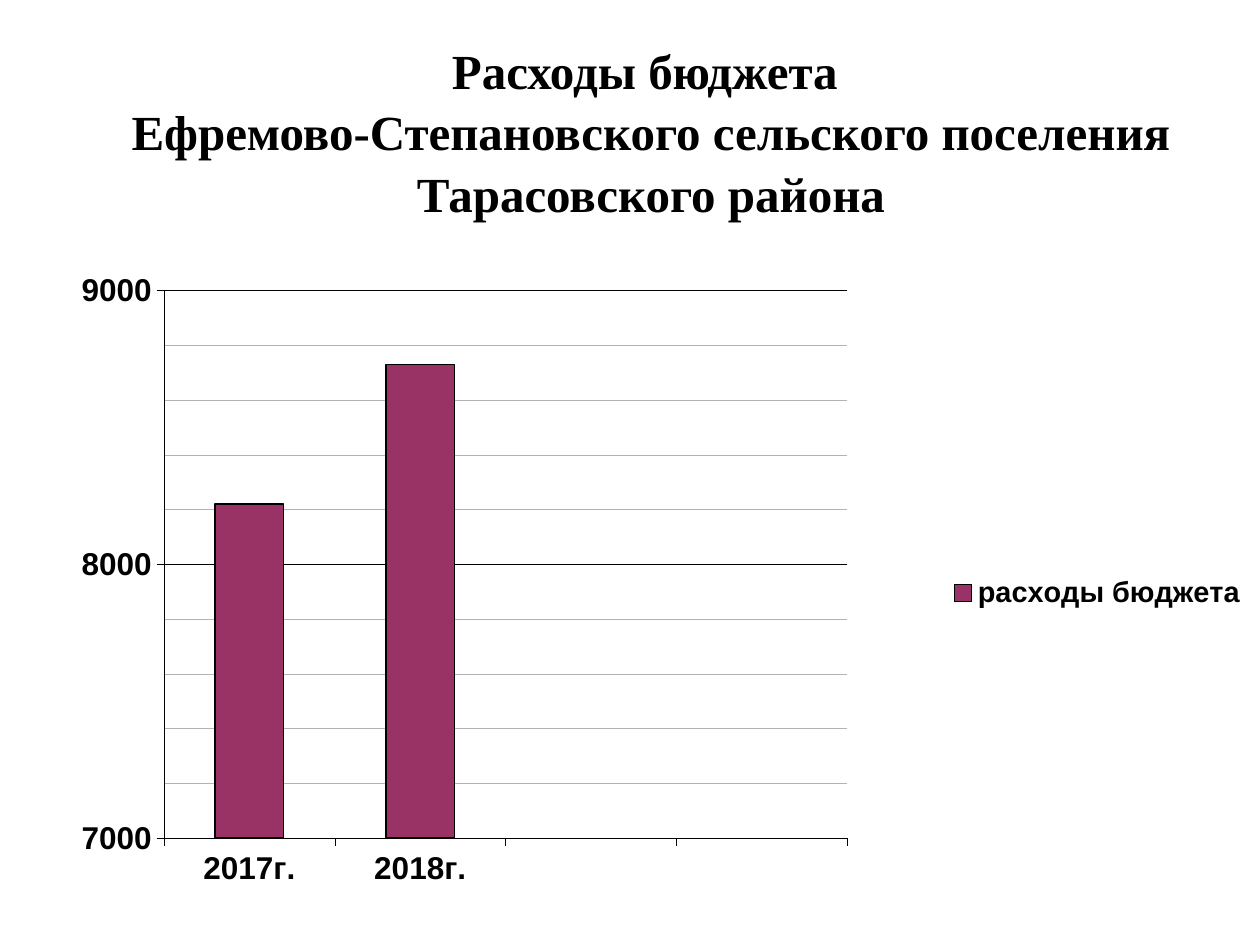
from copy import deepcopy

from lxml import etree
from pptx import Presentation
from pptx import util as u
from pptx.chart.data import CategoryChartData
from pptx.dml.color import RGBColor
from pptx.enum import chart as charts, text

PX = 914400 // 126
COLORS = {"ink": "000000", "paper": "FFFFFF", "bar": "993366", "minor": "B3B3B3"}
LAYOUT = {"x": 0.089, "y": 0.039, "w": 0.568, "h": 0.835}
TITLE = [
    "Расходы бюджета ",
    "Ефремово-Степановского сельского поселения",
    "Тарасовского района",
]


def style_font(font, size, name="Arial"):
    font.size = u.Pt(size)
    font.name = name
    font.bold = True
    font.color.rgb = RGBColor.from_string(COLORS["ink"])


def style_line(line, color="ink", width=0.25):
    line.color.rgb = RGBColor.from_string(COLORS[color])
    line.width = u.Pt(width)


deck = Presentation()
deck.slide_width, deck.slide_height = 1260 * PX, 945 * PX
page = deck.slides.add_slide(deck.slide_layouts[6])
page.background.fill.solid()
page.background.fill.fore_color.rgb = RGBColor.from_string(COLORS["paper"])

box = page.shapes.add_textbox(84 * PX, 31 * PX, 1134 * PX, 241 * PX)
frame = box.text_frame
frame.word_wrap = True
frame.vertical_anchor = text.MSO_ANCHOR.TOP
for index, line in enumerate(TITLE):
    para = frame.add_paragraph() if index else frame.paragraphs[0]
    para.alignment = text.PP_ALIGN.CENTER
    para.line_spacing = 1.05
    span = para.add_run()
    span.text = line
    style_font(span.font, 28, "Times New Roman")

data = CategoryChartData()
data.categories = ["2017г.", "2018г.", "", ""]
data.add_series("расходы бюджета", [8220, 8730, None, None])
chart = page.shapes.add_chart(
    charts.XL_CHART_TYPE.COLUMN_CLUSTERED,
    57 * PX, 265 * PX, 1203 * PX, 656 * PX, data,
).chart
chart.has_title = False
style_font(chart.font, 18)

plot = chart.plots[0]
plot.gap_width = 150
plot.vary_by_categories = False
series = plot.series[0]
series.invert_if_negative = False
series.format.fill.solid()
series.format.fill.fore_color.rgb = RGBColor.from_string(COLORS["bar"])
style_line(series.format.line, width=1)

years, amounts = chart.category_axis, chart.value_axis
for axis in (years, amounts):
    axis.major_tick_mark = charts.XL_TICK_MARK.OUTSIDE
    axis.minor_tick_mark = charts.XL_TICK_MARK.NONE
    style_font(axis.tick_labels.font, 18)
    style_line(axis.format.line)
years.tick_label_position = charts.XL_TICK_LABEL_POSITION.LOW
amounts.minimum_scale, amounts.maximum_scale = 7000, 9000
amounts.major_unit, amounts.minor_unit = 1000, 200
amounts.tick_labels.number_format = "0"
amounts.tick_labels.number_format_is_linked = False

chart.has_legend = True
chart.legend.position = charts.XL_LEGEND_POSITION.RIGHT
chart.legend.include_in_layout = False
style_font(chart.legend.font, 16.5)

area = chart._chartSpace.chart.plotArea
namespace = "{" + area.nsmap["c"] + "}"

amounts.has_major_gridlines = amounts.has_minor_gridlines = True
grid_line = amounts.major_gridlines.format.line
style_line(grid_line, "minor")
major_grid = area.find(f".//{namespace}majorGridlines")
minor_grid = area.find(f".//{namespace}minorGridlines")
minor_grid.append(deepcopy(major_grid.find(namespace + "spPr")))
style_line(grid_line)

for old in area.findall(namespace + "layout"):
    area.remove(old)
layout = etree.Element(namespace + "layout")
area.insert(0, layout)
manual = etree.SubElement(layout, namespace + "manualLayout")
settings = {"layoutTarget": "inner", "xMode": "edge", "yMode": "edge", **LAYOUT}
for tag, value in settings.items():
    etree.SubElement(manual, namespace + tag, val=str(value))

deck.save("out.pptx")
